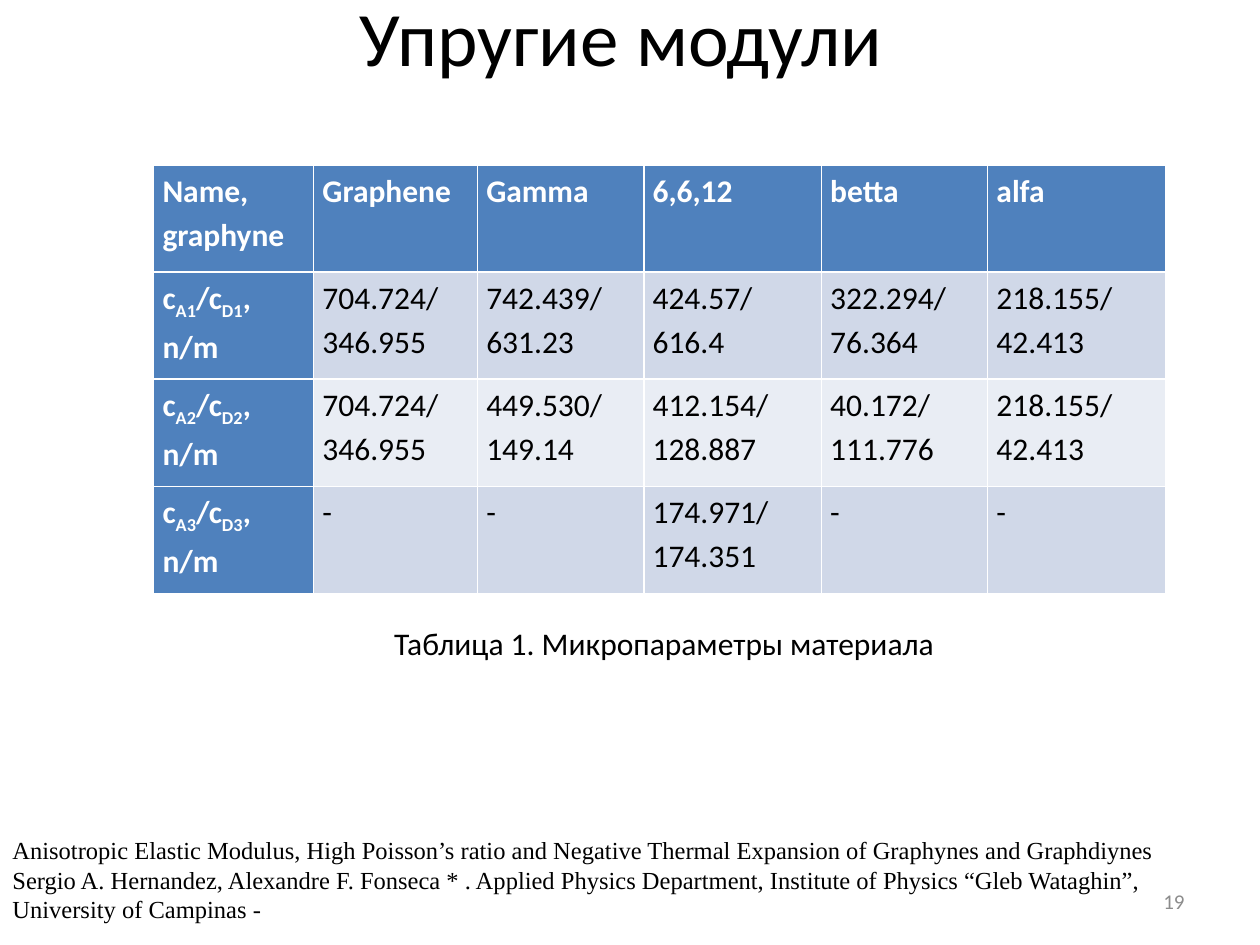
from pptx import Presentation
from pptx.dml.color import RGBColor
from pptx.enum.text import MSO_ANCHOR, MSO_AUTO_SIZE, PP_ALIGN
from pptx.util import Inches, Pt

LEFT, CENTER, RIGHT = PP_ALIGN.LEFT, PP_ALIGN.CENTER, PP_ALIGN.RIGHT
TOP, MIDDLE = MSO_ANCHOR.TOP, MSO_ANCHOR.MIDDLE
FIT_SHAPE, NO_FIT = MSO_AUTO_SIZE.SHAPE_TO_FIT_TEXT, MSO_AUTO_SIZE.NONE

COLORS = {
    "text": "000000",
    "light": "FFFFFF",
    "number": "8C8C8C",
    "header": "4F81BD",
    "odd": "D0D8E8",
    "even": "E9EDF4",
}
SUBSCRIPT = "-25000"

COL_WIDTHS = [1.27, 1.3, 1.32, 1.41, 1.32, 1.41]
ROW_HEIGHT = 0.85
HEADINGS = ["Name,\ngraphyne", "Graphene", "Gamma", "6,6,12", "betta", "alfa"]
MODULI = [
    ["704.724/\n346.955", "742.439/\n631.23", "424.57/\n616.4",
     "322.294/\n76.364", "218.155/\n42.413"],
    ["704.724/\n346.955", "449.530/\n149.14", "412.154/\n128.887",
     "40.172/\n111.776", "218.155/\n42.413"],
    ["-", "-", "174.971/\n174.351", "-", "-"],
]
UNIT_ENDINGS = [",\nn/m", ",\nn/m", ", n/m"]
CITATION = (
    "Anisotropic Elastic Modulus, High Poisson’s ratio and Negative Thermal "
    "Expansion of Graphynes and Graphdiynes\n"
    "Sergio A. Hernandez, Alexandre F. Fonseca * . Applied Physics Department, "
    "Institute of Physics “Gleb Wataghin”,\n"
    "University of Campinas -"
)


def place(sp, left, top, width, height):
    sp.left, sp.top = Inches(left), Inches(top)
    sp.width, sp.height = Inches(width), Inches(height)


class SlideBuilder:
    def __init__(self, slide, font="Calibri"):
        self.slide = slide
        self.font = font

    def add_runs(self, tf, runs, size, color="text", bold=False, align=LEFT,
                 spacing=None, font=None):
        """Add (text, is_subscript) runs; a newline starts a new paragraph."""
        p = tf.paragraphs[0]
        for text, is_subscript in runs:
            for i, line in enumerate(text.split("\n")):
                if i:
                    p = tf.add_paragraph()
                r = p.add_run()
                r.text = line
                r.font.name = font or self.font
                r.font.size = Pt(size)
                r.font.bold = bold
                r.font.color.rgb = RGBColor.from_string(COLORS[color])
                if is_subscript:
                    r.font._element.set("baseline", SUBSCRIPT)
        for p in tf.paragraphs:
            p.alignment = align
            if spacing:
                p.line_spacing = spacing

    def title(self, text, box):
        sp = self.slide.shapes.title
        place(sp, *box)
        tf = sp.text_frame
        tf.vertical_anchor = MIDDLE
        self.add_runs(tf, [(text, False)], 44, align=CENTER)

    def text(self, text, box, size, wrap=False, anchor=TOP, **style):
        sp = self.slide.shapes.add_textbox(*map(Inches, box))
        tf = sp.text_frame
        tf.word_wrap = wrap
        tf.auto_size = NO_FIT if wrap else FIT_SHAPE
        tf.vertical_anchor = anchor
        self.add_runs(tf, [(text, False)], size, **style)

    def cell(self, cell, runs, fill, color="text", bold=False):
        cell.fill.solid()
        cell.fill.fore_color.rgb = RGBColor.from_string(COLORS[fill])
        cell.margin_left = cell.margin_right = Inches(0.07)
        cell.margin_top, cell.margin_bottom = Inches(0.01), 0
        self.add_runs(cell.text_frame, runs, 18, color, bold, spacing=1.15)

    def table(self, left, top, rows):
        """Draw rows of cell runs with a header row and a header column."""
        frame = self.slide.shapes.add_table(
            len(rows), len(COL_WIDTHS), Inches(left), Inches(top),
            Inches(sum(COL_WIDTHS)), Inches(ROW_HEIGHT * len(rows)))
        table = frame.table
        table.first_col = True
        for column, width in zip(table.columns, COL_WIDTHS):
            column.width = Inches(width)
        for i, row in enumerate(rows):
            table.rows[i].height = Inches(ROW_HEIGHT)
            for j, runs in enumerate(row):
                if i == 0 or j == 0:
                    self.cell(table.cell(i, j), runs, "header", "light", True)
                else:
                    self.cell(table.cell(i, j), runs, "odd" if i % 2 else "even")


def moduli_rows():
    rows = [[[(heading, False)] for heading in HEADINGS]]
    for n, (values, ending) in enumerate(zip(MODULI, UNIT_ENDINGS), start=1):
        label = [("c", False), (f"A{n}", True), ("/c", False),
                 (f"D{n}", True), (ending, False)]
        rows.append([label] + [[(value, False)] for value in values])
    return rows


def main():
    prs = Presentation()
    prs.slide_width, prs.slide_height = Inches(10), Inches(7.5)
    builder = SlideBuilder(prs.slides.add_slide(prs.slide_layouts[5]))
    builder.title("Упругие модули", (0.43, -0.34, 9, 1.25))
    builder.text("19", (7.17, 6.95, 2.33, 0.4), 12, wrap=True, anchor=MIDDLE,
                 color="number", align=RIGHT)
    builder.text(CITATION, (0, 6.58, 9.38, 0.81), 14, font="Times New Roman")
    builder.text("Таблица 1. Микропараметры материала",
                 (3.03, 4.9, 4.54, 0.4), 18)
    builder.table(1.22, 1.31, moduli_rows())
    prs.save("out.pptx")


if __name__ == "__main__":
    main()
